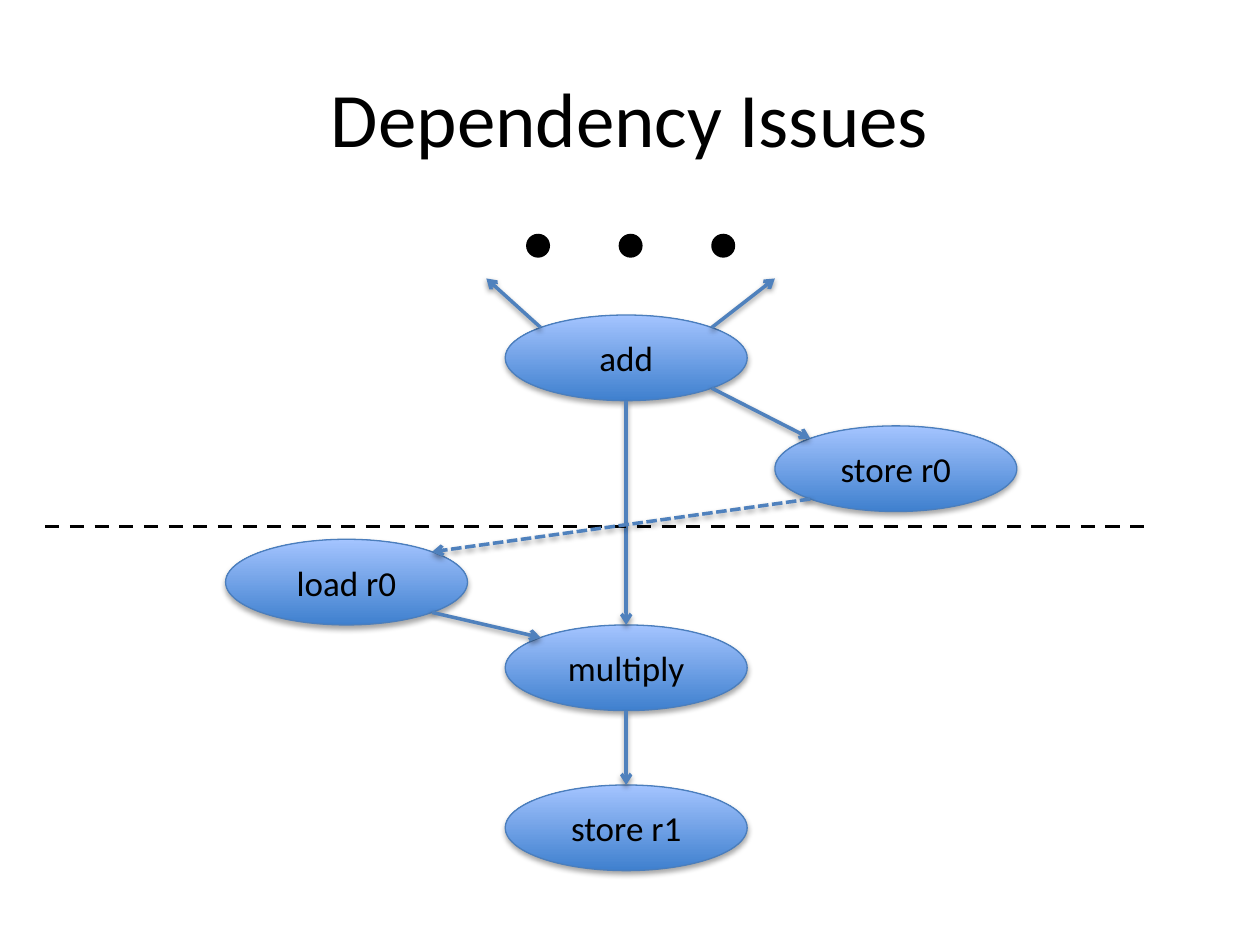
from lxml import etree
from pptx import Presentation
from pptx.dml.color import RGBColor
from pptx.enum.dml import MSO_LINE
from pptx.enum.shapes import MSO_CONNECTOR, MSO_SHAPE
from pptx.enum.text import MSO_ANCHOR, PP_ALIGN
from pptx.oxml.ns import qn
from pptx.util import Inches, Pt

OVAL = MSO_SHAPE.OVAL
STRAIGHT = MSO_CONNECTOR.STRAIGHT
DASH, SHORT_DASH = MSO_LINE.DASH, MSO_LINE.SQUARE_DOT
CENTER, MIDDLE = PP_ALIGN.CENTER, MSO_ANCHOR.MIDDLE

WIDTH, HEIGHT = 10, 7.5
NODE_W, NODE_H = 1.92, 0.68
DIAGONAL = 0.5 ** 0.5

# Connection sites of an ellipse: index, then direction from the centre
SITES = {
    "top": (0, 0, -1),
    "top left": (1, -DIAGONAL, -DIAGONAL),
    "bottom left": (3, -DIAGONAL, DIAGONAL),
    "bottom": (4, 0, 1),
    "bottom right": (5, DIAGONAL, DIAGONAL),
    "top right": (7, DIAGONAL, -DIAGONAL),
}


def color(hex_string):
    return RGBColor.from_string(hex_string)


class Diagram:
    FONT, INK, ARROW, OUTLINE = "Calibri", "000000", "4F81BD", "4B7EBC"
    GRADIENT = ("3F80CE", "A4C4FF")

    def __init__(self, slide):
        self.shapes = slide.shapes

    def text(self, shape, text, size):
        tf = shape.text_frame
        tf.word_wrap = True
        tf.vertical_anchor = MIDDLE
        tf.text = text
        p = tf.paragraphs[0]
        p.alignment = CENTER
        font = p.runs[0].font
        font.name, font.size = self.FONT, Pt(size)
        font.color.rgb = color(self.INK)

    def title(self, text):
        box = self.shapes.add_textbox(
            Inches(0.05 * WIDTH), Inches(0.04 * HEIGHT),
            Inches(0.9 * WIDTH), Inches(HEIGHT / 6))
        self.text(box, text, 44)

    def oval(self, x, y, w, h):
        """Add an ellipse centred on x, y."""
        s = self.shapes.add_shape(
            OVAL, Inches(x - w / 2), Inches(y - h / 2), Inches(w), Inches(h))
        s.shadow.inherit = False
        return s

    def dot(self, x, y):
        s = self.oval(x, y, 0.19, 0.19)
        s.fill.solid()
        s.fill.fore_color.rgb = color(self.INK)
        s.line.fill.background()

    def node(self, text, x, y):
        s = self.oval(x, y, NODE_W, NODE_H)
        s.fill.gradient()
        s.fill.gradient_angle = 90
        for stop, shade in zip(s.fill.gradient_stops, self.GRADIENT):
            stop.color.rgb = color(shade)
        s.line.color.rgb = color(self.OUTLINE)
        s.line.width = Pt(0.75)
        self.shadow(s, 1.8, 35)
        self.text(s, text, 20)
        return s

    def shadow(self, shape, distance, opacity):
        """Cast a soft black shadow straight down."""
        props = shape._element.spPr
        effects = props.find(qn("a:effectLst"))
        outer = etree.SubElement(
            effects, qn("a:outerShdw"), blurRad=str(Pt(3.1)),
            dist=str(Pt(distance)), dir="5400000", rotWithShape="0")
        black = etree.SubElement(outer, qn("a:srgbClr"), val=self.INK)
        etree.SubElement(black, qn("a:alpha"), val=str(opacity * 1000))

    def line(self, start, end, shade, dash=None):
        c = self.shapes.add_connector(STRAIGHT, *start, *end)
        c.line.color.rgb = color(shade)
        c.line.width = Pt(2)
        if dash:
            c.line.dash_style = dash
        etree.SubElement(c._element.spPr, qn("a:effectLst"))
        return c

    def port(self, node, site):
        _, dx, dy = SITES[site]
        return (int(node.left + node.width * (1 + dx) / 2),
                int(node.top + node.height * (1 + dy) / 2))

    def arrow(self, source, source_site, target, target_site=None, dash=None):
        """Join two nodes; without a target site, target is a point in inches."""
        ends = [("a:stCxn", source, source_site)]
        if target_site:
            ends.append(("a:endCxn", target, target_site))
            end = self.port(target, target_site)
        else:
            end = [Inches(v) for v in target]
        c = self.line(self.port(source, source_site), end, self.ARROW, dash)
        etree.SubElement(c.line._get_or_add_ln(), qn("a:tailEnd"), type="arrow")
        self.shadow(c, 1.6, 38)
        joints = c._element.find(".//" + qn("p:cNvCxnSpPr"))
        for tag, node, site in ends:
            etree.SubElement(joints, qn(tag), id=str(node.shape_id),
                             idx=str(SITES[site][0]))


def main():
    prs = Presentation()
    prs.slide_width, prs.slide_height = Inches(WIDTH), Inches(HEIGHT)
    d = Diagram(prs.slides.add_slide(prs.slide_layouts[6]))
    d.title("Dependency Issues")

    axis = 4.97
    add = d.node("add", axis, 2.84)
    for i in range(3):
        d.dot(4.27 + 0.735 * i, 1.95)
    d.arrow(add, "top left", (3.86, 2.21))
    d.arrow(add, "top right", (6.15, 2.21))

    store_r0 = d.node("store r0", 7.11, 3.72)
    d.arrow(add, "bottom right", store_r0, "top left")
    multiply = d.node("multiply", axis, 5.3)
    load_r0 = d.node("load r0", 2.75, 4.62)
    d.arrow(add, "bottom", multiply, "top")
    d.arrow(load_r0, "bottom right", multiply, "top left")
    store_r1 = d.node("store r1", axis, 6.57)
    d.arrow(multiply, "bottom", store_r1, "top")

    boundary = Inches(4.18)
    d.line((Inches(0.36), boundary), (Inches(9.11), boundary), d.INK, DASH)
    d.arrow(store_r0, "bottom left", load_r0, "top right", SHORT_DASH)
    prs.save("out.pptx")


if __name__ == "__main__":
    main()
